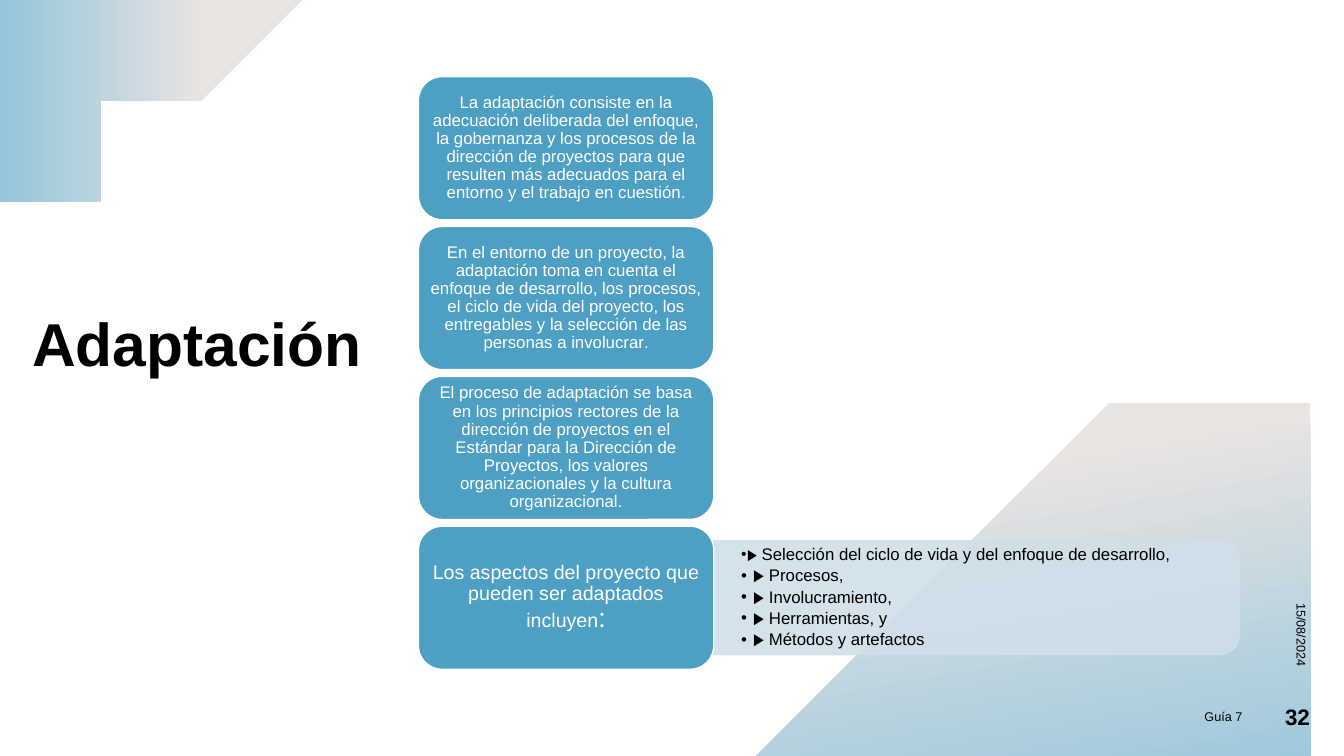
from pptx import Presentation
from pptx.dml.color import RGBColor
from pptx.enum.shapes import MSO_SHAPE
from pptx.enum.text import MSO_ANCHOR, MSO_AUTO_SIZE, PP_ALIGN
from pptx.oxml.ns import qn
from pptx.util import Inches, Pt
from lxml.etree import SubElement

WHITE = RGBColor(0xFF, 0xFF, 0xFF)
BLACK = RGBColor(0, 0, 0)
BLUE = RGBColor(0x4D, 0x9F, 0xC3)
PALE = RGBColor(0xD0, 0xDF, 0xE9)
SAND = RGBColor(0xE8, 0xE4, 0xE2)
SKY = RGBColor(0x94, 0xC5, 0xDB)

TITLE = "Adaptación"
CARDS = [
    [("La adaptación consiste en la adecuación deliberada del enfoque, la gobernanza y los "
      "procesos de la dirección de proyectos para que resulten más adecuados para el entorno "
      "y el trabajo en cuestión", 12), (".", 11)],
    [("En el entorno de un proyecto, la adaptación toma en cuenta el enfoque de desarrollo, "
      "los procesos, el ciclo de vida del proyecto, los entregables y la selección de las "
      "personas a involucrar", 12), (".", 11)],
    [("El proceso de adaptación se basa en los principios rectores de la dirección de "
      "proyectos en el Estándar para la Dirección de Proyectos, los valores "
      "organizacionales y la cultura organizacional.", 12)],
    [("Los aspectos del proyecto que pueden ser adaptados incluyen", 14), (":", 19)],
]
ASPECTS = [
    (0.06, [("▶ ", 11), ("Selección del ciclo de vida y del enfoque de desarrollo,", 12)]),
    (0.12, [("▶ Procesos,", 12)]),
    (0.12, [("▶ Involucramiento,", 12)]),
    (0.12, [("▶ Herramientas, y", 12)]),
    (0.12, [("▶ Métodos y artefactos", 12)]),
]
NOTES = [
    ("15/08/2024", 9, False, (11.46, 5.06, 2.9, 0.4), 90),
    ("Guía 7", 9, False, (9.42, 6.91, 3, 0.4), 0),
    ("32", 16, True, (12.42, 6.91, 0.67, 0.4), 0),
]
WAVES = [
    ([(12.53, 3.7), (12.77, 3.7, 13, 3.74, 13.23, 3.82), (13.33, 3.86), (13.33, 7.5),
      (6.87, 7.5), (11.16, 4.14), (11.2, 4.1), (11.57, 3.85, 11.98, 3.71, 12.4, 3.7),
      (12.44, 3.7, 12.48, 3.69, 12.53, 3.7)], 0.23, 280),
    ([(0, 0), (3.2, 0), (1.7, 1.17), (1.65, 1.21), (1.29, 1.46, 0.88, 1.6, 0.46, 1.62),
      (0.42, 1.62, 0.37, 1.62, 0.33, 1.62), (0.27, 1.62, 0.21, 1.61, 0.15, 1.61),
      (0, 1.59)], 0.33, 180),
]
WIDE, HIGH = 13.33, 7.5
LEFT, TOP, BASE = 4.15, 0.76, 6.64
CARD_W, CARD_H = 2.93, 1.42
BAND_W, BAND_H = 5.21, 1.13
STEP = (BASE - TOP - CARD_H) / (len(CARDS) - 1)
CURVE = 16

deck = Presentation()
deck.slide_width, deck.slide_height = Inches(WIDE), Inches(HIGH)
slide = deck.slides.add_slide(deck.slide_layouts[1])
shapes = slide.shapes


def place(shape, x, y, w, h):
    shape.left, shape.top, shape.width, shape.height = map(Inches, (x, y, w, h))


def setup(frame, sides, ends, anchor=MSO_ANCHOR.MIDDLE):
    frame.word_wrap = True
    frame.auto_size = MSO_AUTO_SIZE.NONE
    frame.vertical_anchor = anchor
    frame.margin_left = frame.margin_right = Inches(sides)
    frame.margin_top = frame.margin_bottom = Inches(ends)


def write(para, runs, color, align, bold=False, space=0.9):
    para.alignment, para.line_spacing = align, space
    para.space_before = Pt(0)
    for text, size in runs:
        run = para.add_run()
        run.text = text
        font = run.font
        font.name, font.size, font.bold = "Arial", Pt(size), bold
        font.color.rgb = color


def bend(start, curve):
    a, b, c, d = start, curve[:2], curve[2:4], curve[4:]
    for k in range(1, CURVE + 1):
        t = k / CURVE
        u = 1 - t
        yield tuple(u**3 * p + 3 * u * u * t * q + 3 * u * t * t * r + t**3 * s
                    for p, q, r, s in zip(a, b, c, d))


def wave(parts, stop, angle):
    dots = [parts[0]]
    for part in parts[1:]:
        dots += [part] if len(part) == 2 else bend(dots[-1], part)
    pen = shapes.build_freeform(*dots[0], scale=Inches(1))
    pen.add_line_segments(dots[1:], close=True)
    shape = pen.convert_to_shape()
    shape.shadow.inherit = False
    shape.line.fill.background()
    shape.fill.gradient()
    shape.fill.gradient_angle = angle
    for mark, spot, color in zip(shape.fill.gradient_stops, (stop, 1), (SAND, SKY)):
        mark.position, mark.color.rgb = spot, color


def panel(kind, color, edge, *area):
    shape = shapes.add_shape(kind, *map(Inches, area))
    shape.shadow.inherit = False
    shape.fill.solid()
    shape.fill.fore_color.rgb = color
    shape.line.color.rgb = edge
    shape.line.width = Pt(1)
    return shape


for item in WAVES:
    wave(*item)

title = shapes.title
place(title, 0.22, 1.29, 4.44, 3.24)
setup(title.text_frame, 0.1, 0.05, MSO_ANCHOR.BOTTOM)
title.text_frame.margin_bottom = Inches(0.76)
write(title.text_frame.paragraphs[0], [(TITLE, 43.2)], BLACK, PP_ALIGN.LEFT, True)

right = LEFT + CARD_W
mid = BASE - CARD_H / 2
band = panel(MSO_SHAPE.ROUND_2_SAME_RECTANGLE, PALE, PALE, right + (BAND_W - BAND_H) / 2,
             mid - BAND_W / 2, BAND_H, BAND_W)
band.rotation = 90
for tint in band._element.spPr.iter(qn("a:srgbClr")):
    SubElement(tint, qn("a:alpha"), val="90000")

body = slide.placeholders[1]
place(body, right, mid - 0.51, 5.15, 1.02)
setup(body.text_frame, 0.27, 0.14)
for i, (inset, runs) in enumerate(ASPECTS):
    para = body.text_frame.add_paragraph() if i else body.text_frame.paragraphs[0]
    write(para, runs, BLACK, PP_ALIGN.LEFT)
    para.space_after = Pt(2.2)
    props = para._p.get_or_add_pPr()
    props.set("marL", str(Inches(inset)))
    props.set("indent", str(-Inches(inset)))
shapes._spTree.append(body._element)

for i, runs in enumerate(CARDS):
    card = panel(MSO_SHAPE.ROUNDED_RECTANGLE, BLUE, WHITE, LEFT, TOP + i * STEP, CARD_W, CARD_H)
    setup(card.text_frame, 0.05, 0.03)
    write(card.text_frame.paragraphs[0], runs, WHITE, PP_ALIGN.CENTER)

for text, size, bold, area, turn in NOTES:
    box = shapes.add_textbox(*map(Inches, area))
    box.rotation = turn
    setup(box.text_frame, 0.1, 0.05)
    write(box.text_frame.paragraphs[0], [(text, size)], BLACK, PP_ALIGN.RIGHT, bold, 1.0)

deck.save("out.pptx")
